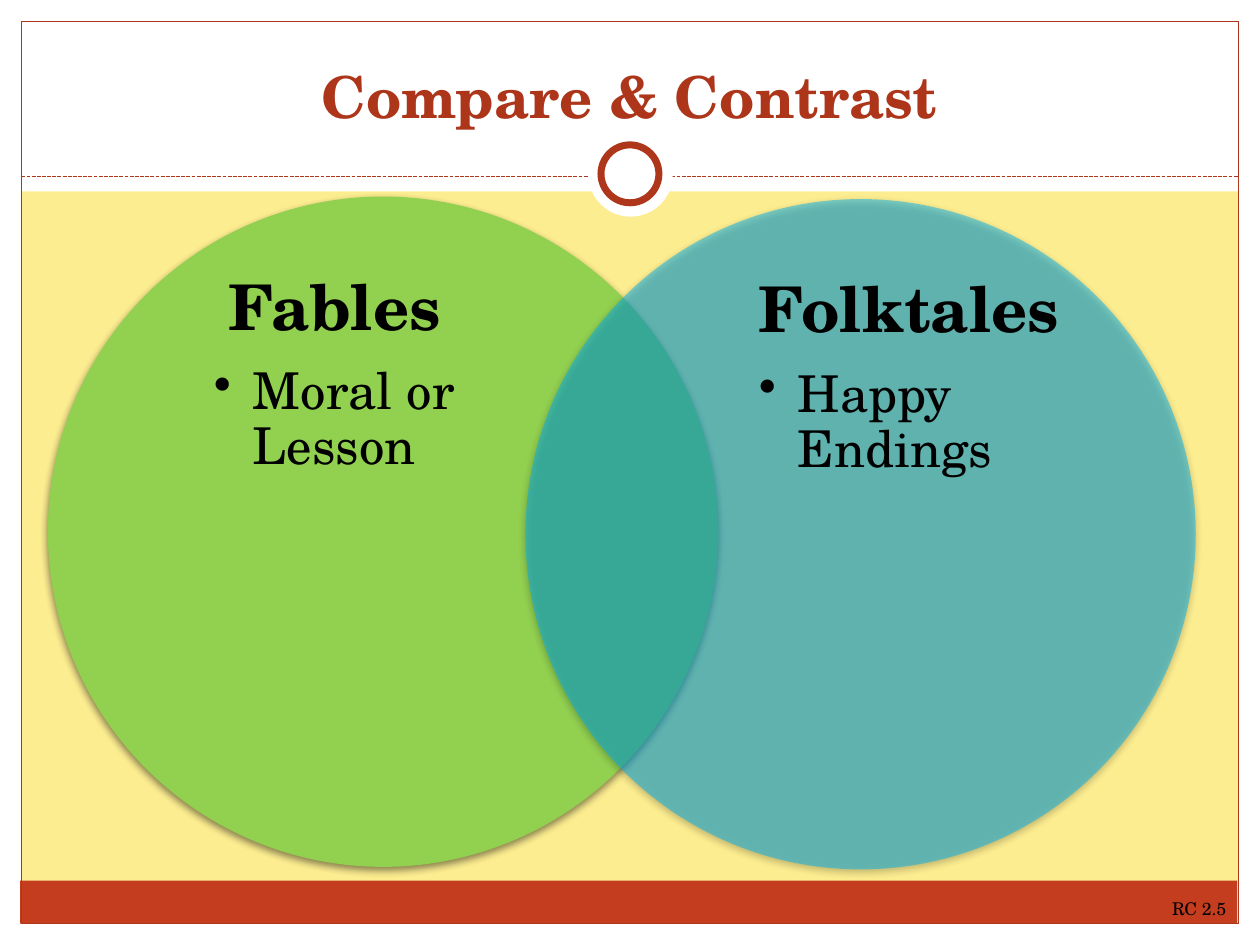
from lxml.etree import SubElement
from pptx import Presentation
from pptx.dml.color import RGBColor
from pptx.enum.dml import MSO_LINE
from pptx.enum.shapes import MSO_CONNECTOR, MSO_SHAPE
from pptx.enum.text import MSO_ANCHOR, MSO_AUTO_SIZE, PP_ALIGN
from pptx.oxml.ns import qn
from pptx.util import Inches, Pt

WHITE = RGBColor(0xFF, 0xFF, 0xFF)
BLACK = RGBColor(0, 0, 0)
CREAM = RGBColor(0xFC, 0xED, 0x90)
RUST = RGBColor(0xAD, 0x36, 0x1B)
TITLE = RGBColor(0xAC, 0x35, 0x1A)
BAND = RGBColor(0xC4, 0x3D, 0x1F)
GREEN = RGBColor(0x92, 0xD0, 0x50)
BLUE = RGBColor(0x00, 0xB0, 0xF0)
FACE = "TeX Gyre Schola"
EDGE = 0.17


def inches(box):
    return [Inches(n) for n in box]


def style(item, **values):
    for name, value in values.items():
        setattr(item, name, value)


def write(par, text, size, color=BLACK, bold=False):
    run = par.add_run()
    run.text = text
    style(run.font, name=FACE, size=Pt(size), bold=bold)
    run.font.color.rgb = color


def add_form(slide, kind, box, fill=None, line=None, width=0.75):
    form = slide.shapes.add_shape(kind, *inches(box))
    form.shadow.inherit = False
    if fill is None:
        form.fill.background()
    else:
        form.fill.solid()
        form.fill.fore_color.rgb = fill
    if line is None:
        form.line.fill.background()
    else:
        form.line.color.rgb = line
        form.line.width = Pt(width)
    return form


def add_rule(slide, left, right, top):
    rule = slide.shapes.add_connector(
        MSO_CONNECTOR.STRAIGHT, *inches((left, top, right, top)))
    rule.line.color.rgb = RUST
    style(rule.line, width=Pt(0.75), dash_style=MSO_LINE.SQUARE_DOT)
    SubElement(rule.element.spPr, qn("a:effectLst"))


def add_frame(slide):
    """Draw the white margins, the border, the foot band and the ring."""
    rect, oval = MSO_SHAPE.RECTANGLE, MSO_SHAPE.OVAL
    inner = 10 - 2 * EDGE
    for box in ((0, 7.5 - EDGE, 10, EDGE), (0, 0, 10, 1.52),
                (0, 0, EDGE, 7.5), (10 - EDGE, 0, EDGE, 7.5)):
        add_form(slide, rect, box, WHITE)
    add_form(slide, rect, (0.16, 6.99, inner, 0.34), BAND)
    add_form(slide, rect, (EDGE, EDGE, inner, 7.16), line=RUST)
    add_rule(slide, EDGE, 10 - EDGE, 1.4)
    add_form(slide, oval, (4.67, 1.05, 0.67, 0.67), WHITE)
    add_form(slide, oval, (4.77, 1.15, 0.46, 0.46), WHITE, RUST, 4)


def set_title(slide, text):
    title = slide.shapes.title
    left, top, width, height = inches((0.33, 0.25, 9.33, 0.83))
    style(title, left=left, top=top, width=width, height=height)
    style(title.text_frame, vertical_anchor=MSO_ANCHOR.BOTTOM,
          auto_size=MSO_AUTO_SIZE.NONE, word_wrap=True)
    par = title.text_frame.paragraphs[0]
    par.alignment = PP_ALIGN.CENTER
    write(par, text, 33, TITLE, True)
    # Bring the title in front of the white band.
    title.element.getparent().append(title.element)


def add_circle(slide, left, top, fill, alpha=None):
    circle = add_form(slide, MSO_SHAPE.OVAL, (left, top, 5.32, 5.32), fill)
    props = circle.element.spPr
    if alpha:
        color = props.find(qn("a:solidFill"))[0]
        SubElement(color, qn("a:alpha"), val=str(alpha * 1000))
    shade = SubElement(props.find(qn("a:effectLst")), qn("a:outerShdw"),
                       blurRad=str(Pt(4)), dist=str(Pt(2)), dir="5400000",
                       rotWithShape="0")
    color = SubElement(shade, qn("a:srgbClr"), val="000000")
    SubElement(color, qn("a:alpha"), val="45000")


def add_bullet(par):
    props = par._p.get_or_add_pPr()
    props.set("marL", str(Inches(0.31)))
    props.set("indent", str(-Inches(0.31)))
    SubElement(props, qn("a:buChar"), char="•")


def add_list(slide, left, top, head, point):
    """Add a heading and bullet, centred across the box as one block."""
    box = slide.shapes.add_textbox(*inches((left, top, 3.07, 4.06)))
    frame = box.text_frame
    style(frame, word_wrap=True, margin_left=0, margin_right=0,
          margin_top=0, margin_bottom=0)
    frame._txBody.bodyPr.set("anchorCtr", "1")
    par = frame.paragraphs[0]
    style(par, alignment=PP_ALIGN.CENTER, line_spacing=0.9,
          space_after=Pt(12.6))
    write(par, head, 36, bold=True)
    par = frame.add_paragraph()
    style(par, alignment=PP_ALIGN.LEFT, line_spacing=0.9,
          space_after=Pt(4.35))
    add_bullet(par)
    write(par, point, 29)


def add_code(slide, text):
    box = slide.shapes.add_textbox(*inches((8.08, 7.08, 1.75, 0.27)))
    box.text_frame.word_wrap = True
    par = box.text_frame.paragraphs[0]
    par.alignment = PP_ALIGN.RIGHT
    write(par, text, 10)


def main():
    deck = Presentation()
    style(deck, slide_width=Inches(10), slide_height=Inches(7.5))
    slide = deck.slides.add_slide(deck.slide_layouts[5])
    slide.background.fill.solid()
    slide.background.fill.fore_color.rgb = CREAM
    add_frame(slide)
    set_title(slide, "Compare & Contrast")
    add_circle(slide, 0.38, 1.56, GREEN)
    add_list(slide, 1.12, 2.19, "Fables", "Moral or Lesson")
    add_circle(slide, 4.17, 1.58, BLUE, 50)
    add_list(slide, 5.68, 2.21, "Folktales", "Happy Endings")
    add_code(slide, "RC 2.5")
    deck.save("out.pptx")


if __name__ == "__main__":
    main()
